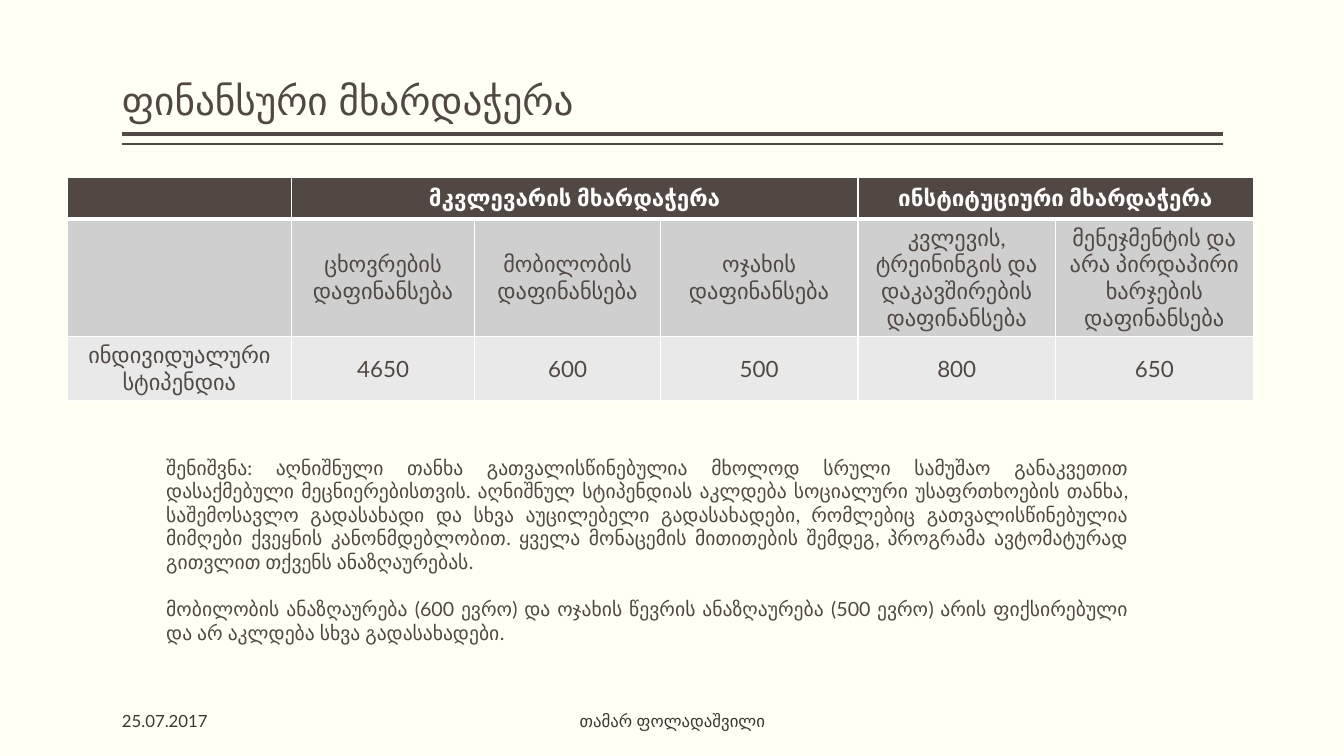
from dataclasses import dataclass

from lxml.etree import SubElement
from pptx import Presentation
from pptx.dml.color import RGBColor as RGB
from pptx.enum.shapes import MSO_CONNECTOR as LINK
from pptx.enum.text import MSO_ANCHOR as ANCHOR, PP_ALIGN as ALIGN
from pptx.oxml.ns import qn
from pptx.util import Inches, Pt


@dataclass(frozen=True)
class Theme:
    """Colours, fonts and type sizes of the slide."""
    back: str = "FFFFF3"
    dark: str = "514843"
    foot: str = "3D3632"
    white: str = "FFFFFF"
    mid: str = "D0CFCF"
    pale: str = "E9E9E9"
    head: str = "Arial"
    body: str = "Lato"
    title: int = 28
    cell: int = 16
    note: int = 14
    small: int = 12


T = Theme()
LEFT, WIDE = 1.21, 10.92
COLS = (2.22, 1.82, 1.84, 1.96, 1.96, 1.96)
ROWS = (0.41, 1.16, 0.64)
FILLS = (T.dark, T.mid, T.pale)
GRID = (
    ("", "მკვლევარის მხარდაჭერა", "", "", "ინსტიტუციური მხარდაჭერა", ""),
    ("", "ცხოვრების დაფინანსება", "მობილობის დაფინანსება", "ოჯახის დაფინანსება",
     "კვლევის, ტრეინინგის და დაკავშირების დაფინანსება",
     "მენეჯმენტის და არა პირდაპირი ხარჯების დაფინანსება"),
    ("ინდივიდუალური სტიპენდია", "4650", "600", "500", "800", "650"),
)
SPANS = ((1, 3), (4, 5))
NOTES = (
    "შენიშვნა: აღნიშნული თანხა გათვალისწინებულია მხოლოდ სრული სამუშაო განაკვეთით "
    "დასაქმებული მეცნიერებისთვის. აღნიშნულ სტიპენდიას აკლდება სოციალური უსაფრთხოების "
    "თანხა, საშემოსავლო გადასახადი და სხვა აუცილებელი გადასახადები, რომლებიც "
    "გათვალისწინებულია მიმღები ქვეყნის კანონმდებლობით. ყველა მონაცემის მითითების "
    "შემდეგ, პროგრამა ავტომატურად გითვლით თქვენს ანაზღაურებას.",
    "მობილობის ანაზღაურება (600 ევრო) და ოჯახის წევრის ანაზღაურება (500 ევრო) არის "
    "ფიქსირებული და არ აკლდება სხვა გადასახადები.",
)


def style(para, size, color, face=T.body, align=ALIGN.LEFT, bold=False):
    """Set the font and alignment of a paragraph."""
    font = para.font
    font.size, font.name, font.bold = Pt(size), face, bold
    font.color.rgb = RGB.from_string(color)
    para.alignment = align


def add_text(slide, box, lines, size, color, face=T.body, align=ALIGN.LEFT,
             anchor=ANCHOR.MIDDLE, inset=0, gap=0, lead=1.0):
    """Add a wrapped text box with one paragraph per line."""
    frame = slide.shapes.add_textbox(*map(Inches, box)).text_frame
    frame.word_wrap = True
    frame.vertical_anchor = anchor
    frame.margin_left = frame.margin_right = Inches(inset)
    for i, line in enumerate(lines):
        para = frame.add_paragraph() if i else frame.paragraphs[0]
        para.text = line
        para.line_spacing = lead
        para.space_before = Pt(gap if i else 0)
        style(para, size, color, face, align)


def add_rule(slide, y, width):
    """Add a level line under the title."""
    ends = map(Inches, (LEFT + WIDE, y, LEFT, y))
    rule = slide.shapes.add_connector(LINK.STRAIGHT, *ends)
    rule.line.width = Pt(width)
    rule.line.color.rgb = RGB.from_string(T.dark)
    SubElement(rule._element.spPr, qn("a:effectLst"))


def edge(cell, row):
    """Draw white borders, thick under the header row."""
    props = cell._tc.get_or_add_tcPr()
    thick = {(0, "lnB"), (1, "lnT")}
    for side in ("lnL", "lnR", "lnT", "lnB"):
        width = Pt(3 if (row, side) in thick else 1)
        line = SubElement(props, qn(f"a:{side}"), w=str(width))
        fill = SubElement(line, qn("a:solidFill"))
        SubElement(fill, qn("a:srgbClr"), val=T.white)


def add_grid(slide):
    """Add the table of funding amounts."""
    box = map(Inches, (0.67, 1.76, sum(COLS), sum(ROWS)))
    table = slide.shapes.add_table(len(ROWS), len(COLS), *box).table
    for col, width in zip(table.columns, COLS):
        col.width = Inches(width)
    for r, texts in enumerate(GRID):
        table.rows[r].height = Inches(ROWS[r])
        for c, text in enumerate(texts):
            cell = table.cell(r, c)
            edge(cell, r)
            cell.fill.solid()
            cell.fill.fore_color.rgb = RGB.from_string(FILLS[r])
            cell.vertical_anchor = ANCHOR.MIDDLE
            cell.text = text
            style(cell.text_frame.paragraphs[0], T.cell, T.dark if r else T.white,
                  align=ALIGN.CENTER, bold=r == 0)
    for first, last in SPANS:
        table.cell(0, first).merge(table.cell(0, last))


def main():
    """Build the slide and save it."""
    deck = Presentation()
    deck.slide_width, deck.slide_height = Inches(13.33), Inches(7.5)
    slide = deck.slides.add_slide(deck.slide_layouts[6])
    fill = slide.background.fill
    fill.solid()
    fill.fore_color.rgb = RGB.from_string(T.back)
    add_rule(slide, 1.33, 3)
    add_rule(slide, 1.43, 1)
    add_text(slide, (LEFT, 0.08, WIDE, 1.2), ["ფინანსური მხარდაჭერა"],
             T.title, T.dark, T.head, anchor=ANCHOR.BOTTOM, lead=0.9)
    add_grid(slide)
    add_text(slide, (1.55, 4.47, 9.74, 1.99), NOTES, T.note, T.dark,
             align=ALIGN.JUSTIFY, anchor=ANCHOR.TOP, inset=0.1, gap=17)
    add_text(slide, (LEFT, 6.95, 2, 0.4), ["25.07.2017"], T.small, T.foot)
    add_text(slide, (3.21, 6.95, 6.92, 0.4), ["თამარ ფოლადაშვილი"],
             T.small, T.foot, align=ALIGN.CENTER)
    deck.save("out.pptx")


if __name__ == "__main__":
    main()
